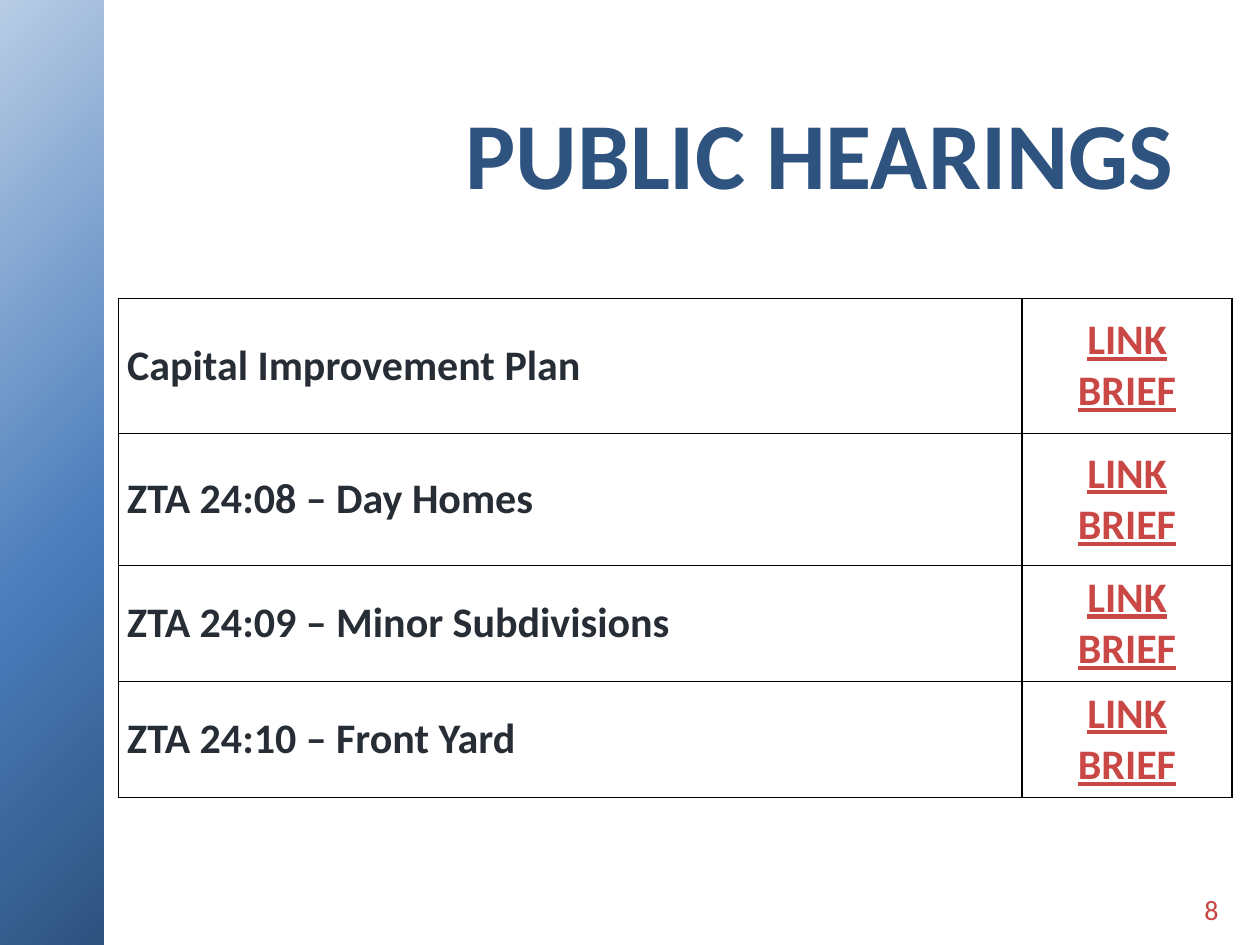
from dataclasses import dataclass

from lxml.etree import SubElement
from pptx import Presentation
from pptx.dml.color import RGBColor
from pptx.enum.shapes import MSO_SHAPE
from pptx.enum.text import MSO_ANCHOR, PP_ALIGN
from pptx.oxml.ns import qn
from pptx.util import Inches, Pt


@dataclass(frozen=True)
class Theme:
    font: str = "Calibri"
    title: str = "2F537F"
    body: str = "262D35"
    link: str = "C94845"
    number: str = "C84340"
    border: str = "000000"
    band: tuple = ((0, "B8CCE5"), (59, "4A7CBB"), (100, "2F537F"))
    title_size: int = 54
    body_size: int = 24
    number_size: int = 16


THEME = Theme()
HEARINGS = [
    ("Capital Improvement Plan", 1.07),
    ("ZTA 24:08 – Day Homes", 1.05),
    ("ZTA 24:09 – Minor Subdivisions", 0.92),
    ("ZTA 24:10 – Front Yard", 0.92),
]
LINKS = "LINK\nBRIEF"
COLUMN_WIDTHS = (7.17, 1.67)


def style_text(frame, size, color, align, bold=False, underline=False):
    for paragraph in frame.paragraphs:
        paragraph.alignment = align
        font = paragraph.font
        font.name, font.size = THEME.font, Pt(size)
        font.bold, font.underline = bold, underline
        font.color.rgb = RGBColor.from_string(color)


def add_solid_fill(parent, color):
    fill = SubElement(parent, qn("a:solidFill"))
    SubElement(fill, qn("a:srgbClr"), val=color)


def add_side_band(slide, left, top, width, height):
    band = slide.shapes.add_shape(MSO_SHAPE.RECTANGLE, left, top, width, height)
    band.shadow.inherit = False
    band.line.fill.background()
    band.fill.gradient()
    gradient = band.fill._xPr.find(qn("a:gradFill"))
    for child in list(gradient):
        gradient.remove(child)
    stops = SubElement(gradient, qn("a:gsLst"))
    for percent, color in THEME.band:
        stop = SubElement(stops, qn("a:gs"), pos=str(percent * 1000))
        SubElement(stop, qn("a:srgbClr"), val=color)
    SubElement(gradient, qn("a:lin"), ang=str(45 * 60000), scaled="0")


def place_title(slide, left, top, width, height):
    title = slide.shapes.title
    title.left, title.top, title.width, title.height = left, top, width, height
    frame = title.text_frame
    frame.text = "PUBLIC HEARINGS"
    frame.vertical_anchor = MSO_ANCHOR.MIDDLE
    style_text(frame, THEME.title_size, THEME.title, PP_ALIGN.CENTER, bold=True)


def add_borders(cell):
    properties = cell._tc.get_or_add_tcPr()
    for index, side in enumerate(("lnL", "lnR", "lnT", "lnB")):
        line = properties.makeelement(qn(f"a:{side}"), {"w": str(Pt(1))})
        add_solid_fill(line, THEME.border)
        properties.insert(index, line)


def fill_cell(cell, text, color, align, underline=False):
    cell.text = text
    cell.vertical_anchor = MSO_ANCHOR.MIDDLE
    cell.margin_left = cell.margin_right = Inches(0.07)
    cell.margin_top = cell.margin_bottom = 0
    cell.fill.background()
    style_text(cell.text_frame, THEME.body_size, color, align, True, underline)
    add_borders(cell)


def add_hearings_table(slide, left, top, width, height):
    table = slide.shapes.add_table(
        len(HEARINGS), len(COLUMN_WIDTHS), left, top, width, height
    ).table
    table.first_row = table.horz_banding = False
    for column, column_width in zip(table.columns, COLUMN_WIDTHS):
        column.width = Inches(column_width)
    for row, (hearing, row_height) in zip(table.rows, HEARINGS):
        row.height = Inches(row_height)
        name_cell, link_cell = row.cells
        fill_cell(name_cell, hearing, THEME.body, PP_ALIGN.LEFT)
        fill_cell(link_cell, LINKS, THEME.link, PP_ALIGN.CENTER, underline=True)


def add_slide_number(slide, left, top, width, height):
    frame = slide.shapes.add_textbox(left, top, width, height).text_frame
    frame.word_wrap = True
    frame.vertical_anchor = MSO_ANCHOR.MIDDLE
    frame.text = "8"
    style_text(frame, THEME.number_size, THEME.number, PP_ALIGN.CENTER)


def build_hearings_slide(presentation):
    slide = presentation.slides.add_slide(presentation.slide_layouts[5])
    add_side_band(slide, 0, 0, Inches(0.82), presentation.slide_height)
    place_title(slide, Inches(3.17), Inches(0.08), Inches(6.67), Inches(2.25))
    add_slide_number(slide, Inches(9.33), Inches(7.02), Inches(0.57), Inches(0.4))
    add_hearings_table(slide, Inches(0.94), Inches(2.37), Inches(8.84), Inches(3.96))


def main():
    presentation = Presentation()
    presentation.slide_width, presentation.slide_height = Inches(10), Inches(7.5)
    build_hearings_slide(presentation)
    presentation.save("out.pptx")


if __name__ == "__main__":
    main()
